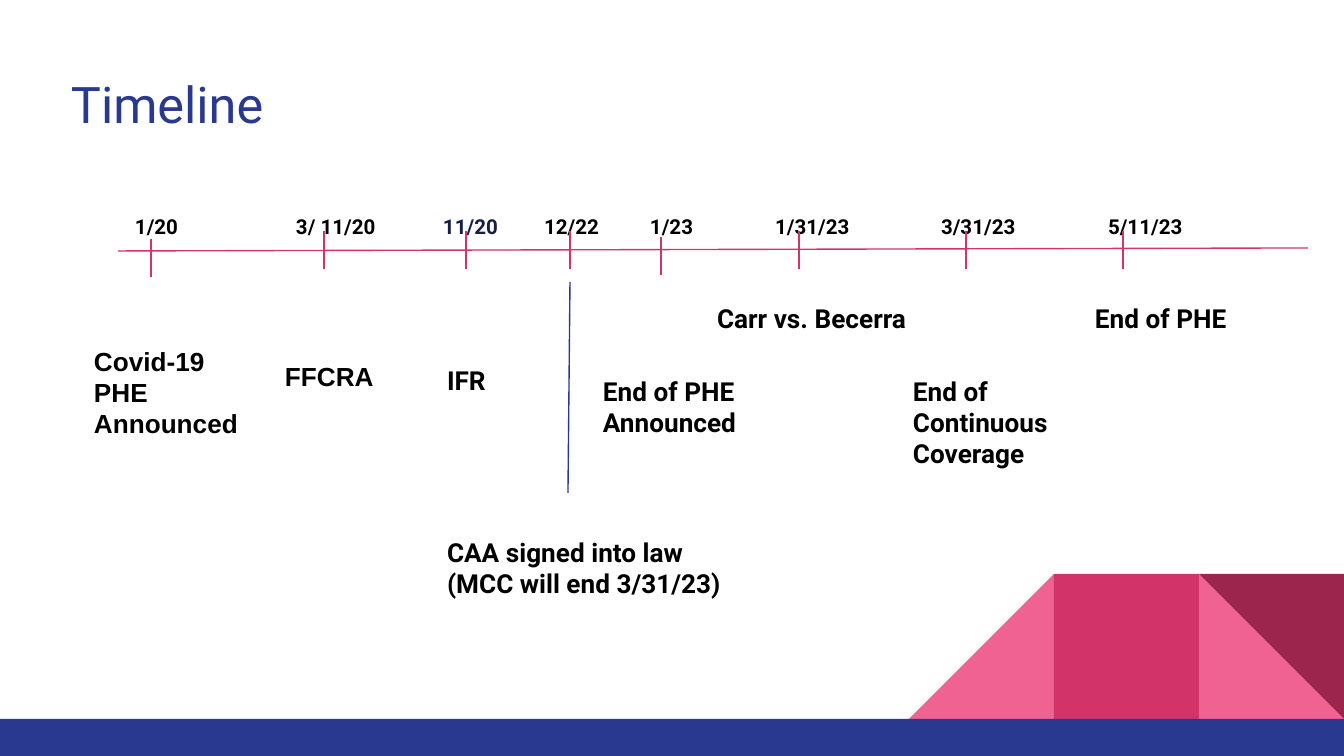
from dataclasses import dataclass

from lxml.etree import SubElement
from pptx import Presentation
from pptx.dml.color import RGBColor
from pptx.enum.shapes import MSO_CONNECTOR, MSO_SHAPE
from pptx.enum.text import MSO_ANCHOR, PP_ALIGN
from pptx.oxml.ns import qn
from pptx.slide import Slide
from pptx.text.text import TextFrame
from pptx.util import Emu, Pt

SLIDE_WIDTH, SLIDE_HEIGHT = 1344, 756
SCALE = 9144000 / SLIDE_WIDTH
INSET = 13
TICK_HEIGHT = 38
DATE_WIDTH, DATE_HEIGHT = 110, 30
BLOCK = 145
FOOTER_TOP = 719
BLUE, NAVY, BLACK = "2A3990", "151D48", "000000"
CRIMSON, PINK, MAROON = "D23369", "F06292", "9C254D"


@dataclass
class Milestone:
    date: str
    date_left: int
    tick_x: int
    tick_top: int = 231
    color: str = BLACK


@dataclass
class Event:
    text: str
    left: int
    top: int
    width: int
    height: int
    font: str = "Roboto"


@dataclass
class Block:
    left: int
    color: str
    kind: MSO_SHAPE = MSO_SHAPE.RIGHT_TRIANGLE
    rotation: int = 0


MILESTONES = [
    Milestone("1/20", 135, 151, 239),
    Milestone("3/ 11/20", 296, 324),
    Milestone("11/20", 443, 466, color=NAVY),
    Milestone("12/22", 544, 570),
    Milestone("1/23", 650, 661, 237),
    Milestone("1/31/23", 775, 799),
    Milestone("3/31/23", 941, 966),
    Milestone("5/11/23", 1108, 1123),
]

EVENTS = [
    Event("Covid-19\nPHE\nAnnounced", 81, 332, 180, 122, "Arial"),
    Event("FFCRA", 272, 347, 117, 90, "Arial"),
    Event("IFR", 434, 351, 90, 59),
    Event("End of PHE Announced", 590, 362, 180, 90),
    Event("End of Continuous\nCoverage", 900, 362, 180, 122),
    Event("Carr vs. Becerra", 704, 289, 235, 59),
    Event("End of PHE", 1082, 289, 207, 59),
    Event("CAA signed into law (MCC will end 3/31/23)", 434, 523, 335, 90),
]

BLOCKS = [
    Block(SLIDE_WIDTH - BLOCK, PINK),
    Block(SLIDE_WIDTH - 3 * BLOCK, PINK, rotation=270),
    Block(SLIDE_WIDTH - 2 * BLOCK, CRIMSON, MSO_SHAPE.RECTANGLE),
    Block(SLIDE_WIDTH - BLOCK, MAROON, rotation=180),
]


def px(length: int) -> Emu:
    return Emu(round(length * SCALE))


def rgb(color: str) -> RGBColor:
    return RGBColor.from_string(color)


def write_text(frame: TextFrame, text: str, *, size: int, color: str,
               font: str = "Roboto", bold: bool = False, inset: int = INSET,
               left_inset: int = INSET, anchor: MSO_ANCHOR = MSO_ANCHOR.TOP) -> None:
    frame.word_wrap = True
    frame.vertical_anchor = anchor
    frame.margin_left = px(left_inset)
    frame.margin_top = frame.margin_right = frame.margin_bottom = px(inset)
    for index, line in enumerate(text.split("\n")):
        para = frame.add_paragraph() if index else frame.paragraphs[0]
        para.alignment = PP_ALIGN.LEFT
        span = para.add_run()
        span.text = line
        span.font.name = font
        span.font.size = Pt(size)
        span.font.bold = bold
        span.font.color.rgb = rgb(color)


def draw_shape(page: Slide, kind: MSO_SHAPE, left: int, top: int, width: int,
               height: int, color: str, rotation: int = 0) -> None:
    shape = page.shapes.add_shape(kind, px(left), px(top), px(width), px(height))
    shape.rotation = rotation
    shape.shadow.inherit = False
    shape.fill.solid()
    shape.fill.fore_color.rgb = rgb(color)
    shape.line.fill.background()


def draw_line(page: Slide, start: tuple[int, int], end: tuple[int, int], color: str) -> None:
    line = page.shapes.add_connector(
        MSO_CONNECTOR.STRAIGHT, px(start[0]), px(start[1]), px(end[0]), px(end[1]))
    line.line.color.rgb = rgb(color)
    line.line.width = Pt(0.75)
    SubElement(line._element.spPr, qn("a:effectLst"))


def draw_milestone(page: Slide, milestone: Milestone) -> None:
    box = page.shapes.add_textbox(
        px(milestone.date_left), px(211), px(DATE_WIDTH), px(DATE_HEIGHT))
    write_text(box.text_frame, milestone.date, size=11, color=milestone.color, bold=True,
               inset=0, left_inset=0, anchor=MSO_ANCHOR.MIDDLE)
    draw_line(page, (milestone.tick_x, milestone.tick_top),
              (milestone.tick_x, milestone.tick_top + TICK_HEIGHT), CRIMSON)


def draw_event(page: Slide, event: Event) -> None:
    box = page.shapes.add_textbox(
        px(event.left), px(event.top), px(event.width), px(event.height))
    write_text(box.text_frame, event.text, size=14, color=BLACK, font=event.font, bold=True)


def main() -> None:
    deck = Presentation()
    deck.slide_width, deck.slide_height = px(SLIDE_WIDTH), px(SLIDE_HEIGHT)
    page = deck.slides.add_slide(deck.slide_layouts[5])

    for block in BLOCKS:
        draw_shape(page, block.kind, block.left, FOOTER_TOP - BLOCK, BLOCK, BLOCK,
                   block.color, block.rotation)
    draw_shape(page, MSO_SHAPE.RECTANGLE, 0, FOOTER_TOP, SLIDE_WIDTH,
               SLIDE_HEIGHT - FOOTER_TOP, BLUE)

    title = page.shapes.title
    title.left, title.top, title.width, title.height = px(46), px(60), px(1252), px(89)
    write_text(title.text_frame, "Timeline", size=27, color=BLUE, left_inset=25)

    draw_line(page, (118, 251), (1308, 248), CRIMSON)
    for milestone in MILESTONES:
        draw_milestone(page, milestone)
    draw_line(page, (570, 282), (568, 493), BLUE)
    for event in EVENTS:
        draw_event(page, event)

    deck.save("out.pptx")


if __name__ == "__main__":
    main()
